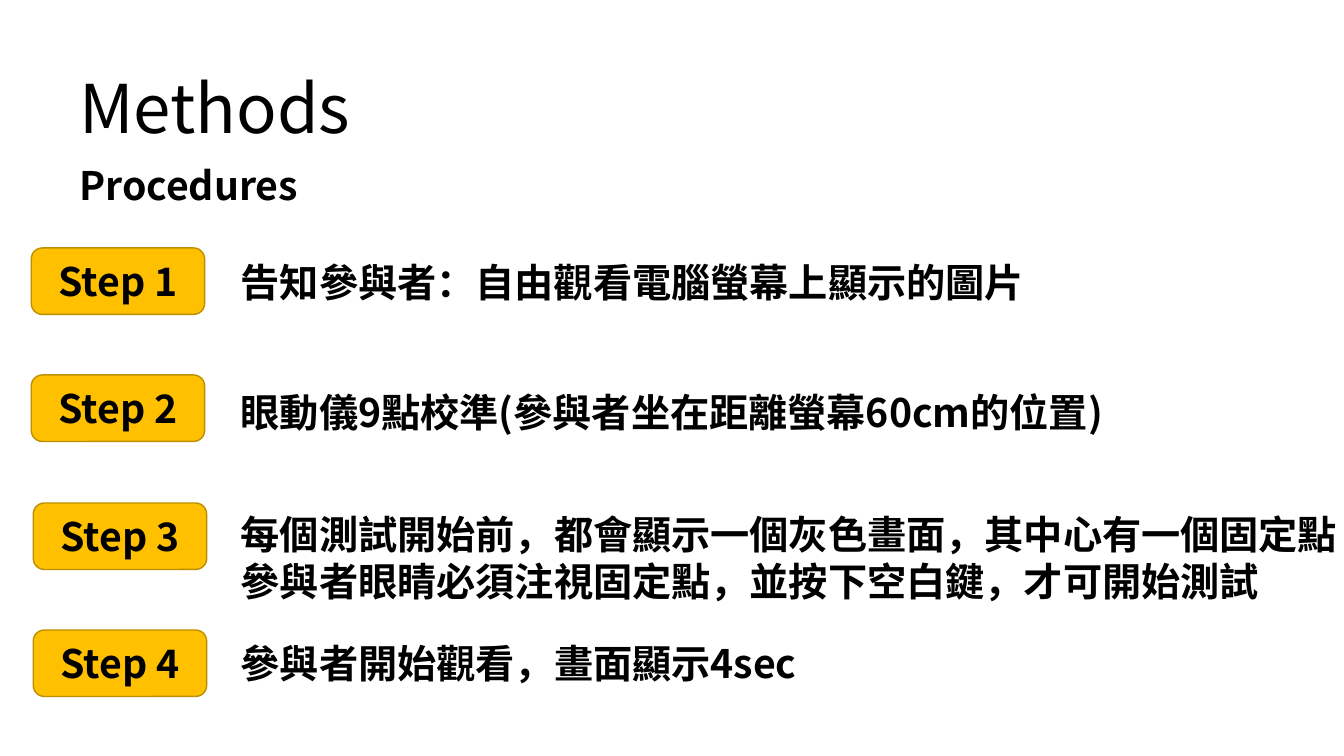
from dataclasses import dataclass

import pptx
import pptx.dml.color
import pptx.enum.shapes
import pptx.enum.text
import pptx.oxml.ns
import pptx.util
from lxml import etree

Inches = pptx.util.Inches
FONT = "Noto Sans CJK SC"
BLACK, AMBER, DARK_AMBER = "000000", "FFC000", "BD8E00"
HEADING = {"size": pptx.util.Pt(48), "bold": False, "name": FONT}
BODY = {"size": pptx.util.Pt(28), "bold": True, "name": FONT}
STEP_TOP, STEP_PITCH = 2.46, 1.263


@dataclass
class Step:
    badge_left: float
    text_top: float
    width: float
    height: float
    lines: list[str]


STEPS = [
    Step(0.31, 2.51, 8.97, 0.57, ["告知參與者：自由觀看電腦螢幕上顯示的圖片"]),
    Step(0.31, 3.8, 10, 0.57, ["眼動儀9點校準(參與者坐在距離螢幕60cm的位置)"]),
    Step(0.33, 5.01, 11.29, 1.04, [
        "每個測試開始前，都會顯示一個灰色畫面，其中心有一個固定點",
        "參與者眼睛必須注視固定點，並按下空白鍵，才可開始測試",
    ]),
    Step(0.33, 6.29, 8.11, 0.57, ["參與者開始觀看，畫面顯示4sec"]),
]


def rgb(color: str) -> pptx.dml.color.RGBColor:
    return pptx.dml.color.RGBColor.from_string(color)


def write_lines(tf, lines: list[str], fmt: dict, align=None) -> None:
    for i, line in enumerate(lines):
        p = tf.add_paragraph() if i else tf.paragraphs[0]
        p.alignment = align
        r = p.add_run()
        r.text = line
        for name, value in fmt.items():
            setattr(r.font, name, value)
        r.font.color.rgb = rgb(BLACK)
        # Chinese characters take the East Asian typeface
        ea = etree.SubElement(r._r.get_or_add_rPr(), pptx.oxml.ns.qn("a:ea"))
        ea.set("typeface", FONT)


def add_text(s, left: float, top: float, width: float, height: float,
             lines: list[str], fmt: dict) -> None:
    sp = s.shapes.add_textbox(*map(Inches, (left, top, width, height)))
    tf = sp.text_frame
    tf.word_wrap = True
    tf.auto_size = pptx.enum.text.MSO_AUTO_SIZE.SHAPE_TO_FIT_TEXT
    write_lines(tf, lines, fmt)


def add_badge(s, left: float, top: float, label: str) -> None:
    sp = s.shapes.add_shape(pptx.enum.shapes.MSO_SHAPE.ROUNDED_RECTANGLE,
                            *map(Inches, (left, top, 1.72, 0.66)))
    sp.shadow.inherit = False
    sp.fill.solid()
    sp.fill.fore_color.rgb = rgb(AMBER)
    sp.line.color.rgb = rgb(DARK_AMBER)
    sp.line.width = pptx.util.Pt(1)
    tf = sp.text_frame
    tf.vertical_anchor = pptx.enum.text.MSO_ANCHOR.MIDDLE
    write_lines(tf, [label], BODY, pptx.enum.text.PP_ALIGN.CENTER)


def main() -> None:
    prs = pptx.Presentation()
    prs.slide_width, prs.slide_height = Inches(13.33), Inches(7.5)
    s = prs.slides.add_slide(prs.slide_layouts[6])

    add_text(s, 0.69, 0.61, 14.3, 0.91, ["Methods"], HEADING)
    add_text(s, 0.69, 1.55, 2.39, 0.57, ["Procedures"], BODY)
    for i, step in enumerate(STEPS):
        add_badge(s, step.badge_left, round(STEP_TOP + i * STEP_PITCH, 2), f"Step {i + 1}")
        add_text(s, 2.29, step.text_top, step.width, step.height, step.lines, BODY)

    prs.save("out.pptx")


if __name__ == "__main__":
    main()
